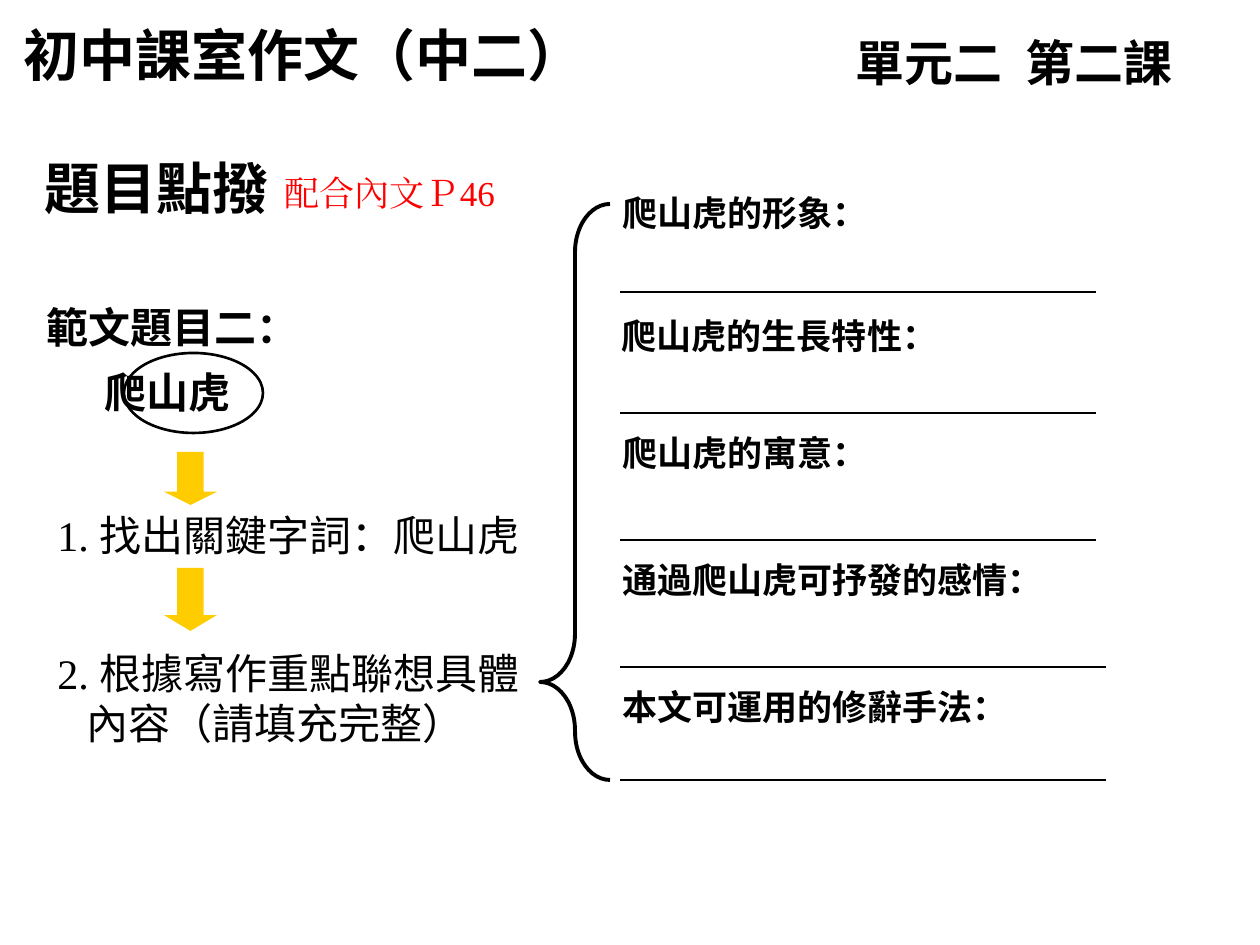
from pptx import Presentation
from pptx.dml.color import RGBColor
from pptx.enum.shapes import MSO_CONNECTOR, MSO_SHAPE
from pptx.enum.text import PP_ALIGN
from pptx.oxml.ns import qn
from pptx.util import Emu, Pt
from lxml.etree import SubElement

SCALE = 914400 / 126
BLACK, RED, GOLD = "000000", "FF0000", "FFCC00"


def px(*lengths):
    return [Emu(round(length * SCALE)) for length in lengths]


def add_text(place, lines, size, font, bold=False, color=BLACK, spacing=None, align=None):
    box = page.shapes.add_textbox(*px(*place))
    box.text_frame.word_wrap = True
    box.text_frame.text = "\n".join(lines)
    for para in box.text_frame.paragraphs:
        para.line_spacing = spacing
        para.alignment = align
        for span in para.runs:
            span.font.size = Pt(size)
            span.font.bold = bold
            span.font.name = font
            span.font.color.rgb = RGBColor.from_string(color)
            SubElement(span.font._element, qn("a:ea")).set("typeface", font)
    return box


deck = Presentation()
deck.slide_width, deck.slide_height = px(1260, 945)
page = deck.slides.add_slide(deck.slide_layouts[6])

topic = add_text((34, 280, 630, 144), ["範文題目二：", "爬山虎"], 24, "DejaVu Sans", True, spacing=1.3)
topic.text_frame.paragraphs[1]._p.get_or_add_pPr().set("marL", str(px(58)[0]))

add_text((11, 14, 658, 79), ["初中課室作文（中二）"], 32, "Lato", True)
add_text((32, 147, 388, 79), ["題目點撥"], 32, "Arial", True)
add_text((272, 165, 311, 54), ["配合內文Ｐ46"], 20, "Times New Roman", color=RED)

lesson = add_text((843, 26, 422, 72), ["單元二\t第二課"], 28, "Lato", True)
tabs = SubElement(lesson.text_frame.paragraphs[0]._p.get_or_add_pPr(), qn("a:tabLst"))
tab = SubElement(tabs, qn("a:tab"))
tab.set("pos", str(px(170)[0]))
tab.set("algn", "l")

steps = [
    ((45, 503, 514, 63), ["找出關鍵字詞：爬山虎"], "Noto Sans CJK SC"),
    ((45, 641, 525, 113), ["根據寫作重點聯想具體", "內容（請填充完整）"], "DejaVu Sans"),
]
for number, (place, lines, font) in enumerate(steps, 1):
    step = add_text(place, lines, 24, font)
    first, *others = step.text_frame.paragraphs
    content = first.runs[0]
    content_text = content.text
    content.text = f"{number}. "
    content.font.name = "Times New Roman"
    content.font._element.find(qn("a:ea")).set("typeface", "Times New Roman")
    span = first.add_run()
    span.text = content_text
    span.font.size = Pt(24)
    span.font.name = font
    span.font.color.rgb = RGBColor.from_string(BLACK)
    SubElement(span.font._element, qn("a:ea")).set("typeface", font)
    for para in others:
        para._p.get_or_add_pPr().set("marL", str(px(29)[0]))

for top, height, head in [(452, 53, 0.25), (568, 63, 0.3)]:
    arrow = page.shapes.add_shape(MSO_SHAPE.DOWN_ARROW, *px(164, top, 53, height))
    arrow.adjustments[0], arrow.adjustments[1] = 0.5, head
    arrow.shadow.inherit = False
    arrow.fill.solid()
    arrow.fill.fore_color.rgb = RGBColor.from_string(GOLD)
    arrow.line.fill.background()

outlines = [
    (MSO_SHAPE.OVAL, (124, 353, 139, 80), 1.5, []),
    (MSO_SHAPE.LEFT_BRACE, (540, 204, 70, 576), 2.25, [0.69, 0.83]),
]
for kind, place, width, adjustments in outlines:
    outline = page.shapes.add_shape(kind, *px(*place))
    for index, value in enumerate(adjustments):
        outline.adjustments[index] = value
    outline.shadow.inherit = False
    outline.fill.background()
    outline.line.color.rgb = RGBColor.from_string(BLACK)
    outline.line.width = Pt(width)

prompts = [
    ("爬山虎的形象：", (610, 185, 595, 54), "DejaVu Sans", None, None),
    ("爬山虎的生長特性：", (591, 296, 377, 67), "Arial", 1.3, PP_ALIGN.CENTER),
    ("爬山虎的寓意：", (610, 413, 377, 67), "Arial", 1.3, None),
    ("通過爬山虎可抒發的感情：", (610, 540, 466, 67), "Arial", 1.3, None),
    ("本文可運用的修辭手法：", (610, 667, 466, 67), "Arial", 1.3, None),
]
for prompt, place, font, spacing, align in prompts:
    add_text(place, [prompt], 20, font, True, spacing=spacing, align=align)

for right, level in [(1096, 292), (1096, 413), (1096, 540), (1106, 667), (1106, 780)]:
    blank = page.shapes.add_connector(MSO_CONNECTOR.STRAIGHT, *px(620, level, right, level))
    blank.line.color.rgb = RGBColor.from_string(BLACK)
    blank.line.width = Pt(1)
    SubElement(blank._element.spPr, qn("a:effectLst"))

deck.save("out.pptx")
